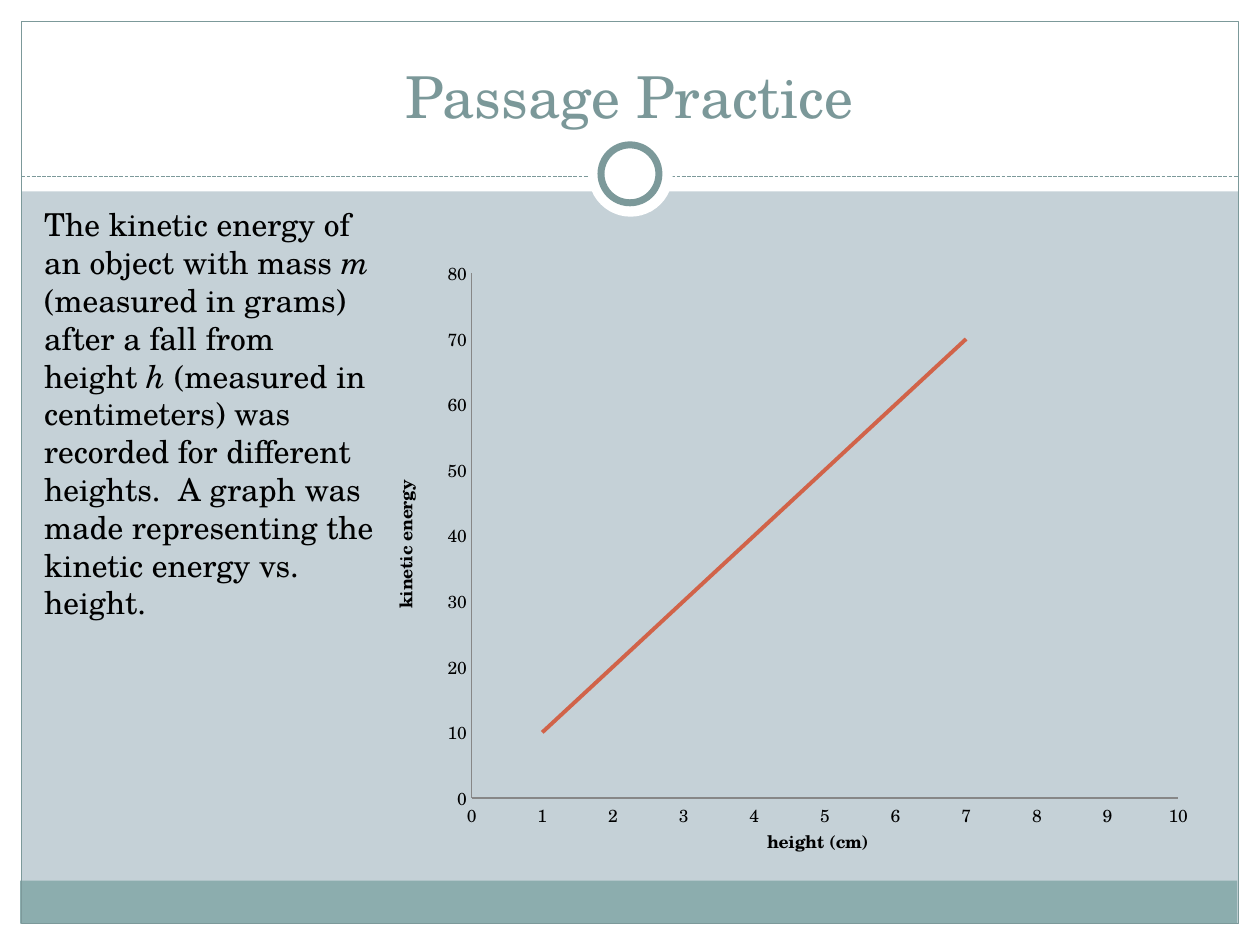
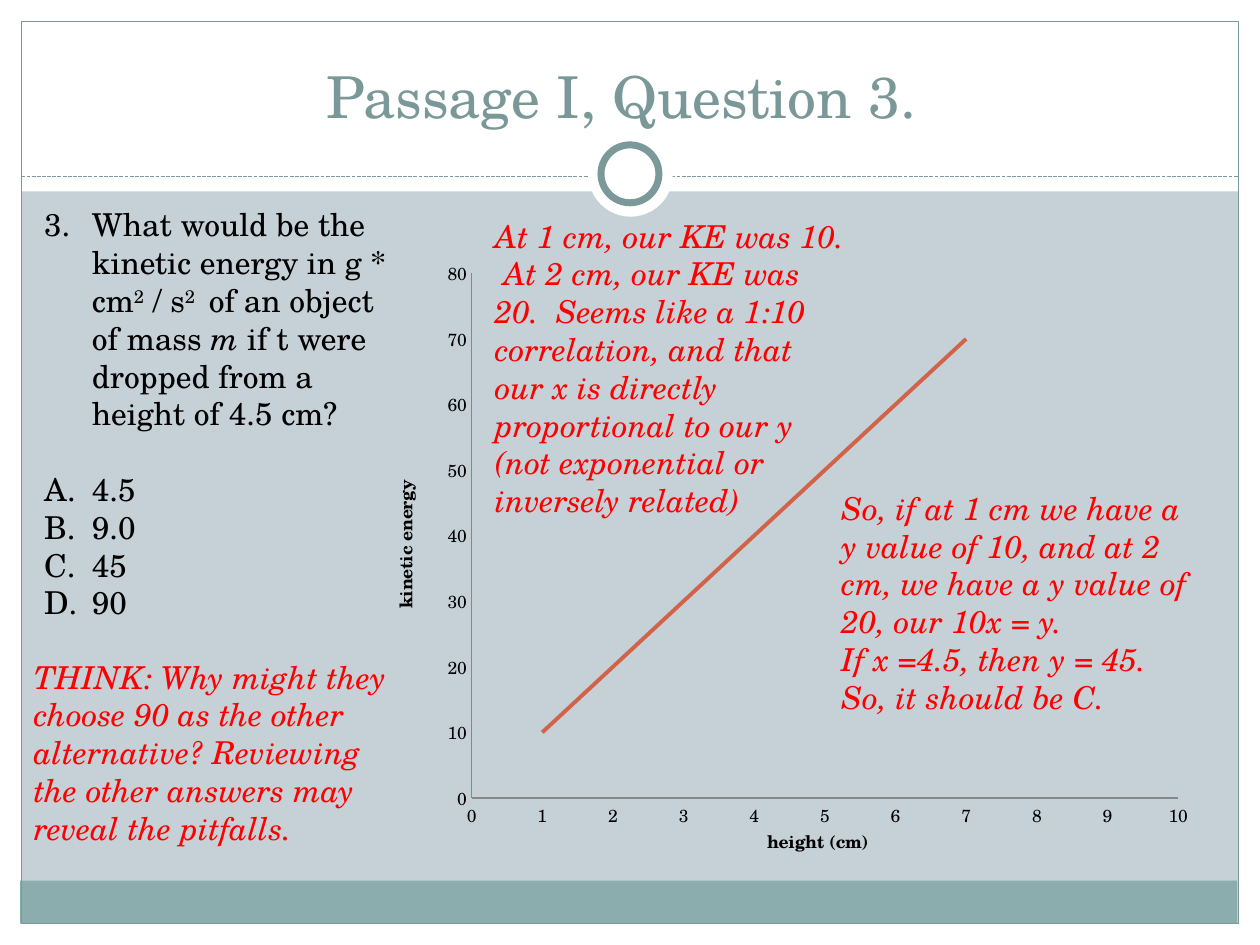
import collections
import pptx
import pptx.chart.data
import pptx.dml.color
import pptx.enum.chart
import pptx.enum.dml
import pptx.enum.shapes
import pptx.enum.text
import pptx.oxml
import pptx.oxml.ns
import pptx.util

Inches = pptx.util.Inches
Pt = pptx.util.Pt
RGB = pptx.dml.color.RGBColor.from_string
SHAPE = pptx.enum.shapes.MSO_SHAPE
qn = pptx.oxml.ns.qn

Theme = collections.namedtuple(
    "Theme", "font title_size body_size chart_size title text note page white band rule axis series")
theme = Theme(
    font="TeX Gyre Schola", title_size=Pt(33), body_size=Pt(18), chart_size=Pt(10),
    title=RGB("7B9899"), text=RGB("000000"), note=RGB("FF0000"), page=RGB("C5D1D7"),
    white=RGB("FFFFFF"), band=RGB("8CADAE"), rule=RGB("7C999A"), axis=RGB("878787"),
    series=RGB("D16349"))


def add_runs(p, runs, color, size):
    for text, style in runs:
        r = p.add_run()
        r.text = text
        r.font.name = theme.font
        r.font.size = size
        r.font.color.rgb = color
        r.font.italic = style == "italic"
        if style == "super":
            r.font.element.set("baseline", "30000") if hasattr(r.font, "element") else \
                r._r.get_or_add_rPr().set("baseline", "30000")


def set_bullet(p, kind, start):
    pPr = p._p.get_or_add_pPr()
    indent = Inches(0.38) if kind else 0
    pPr.set("marL", str(indent))
    pPr.set("indent", str(-indent))
    if not kind:
        pPr.append(pptx.oxml.parse_xml(f'<a:buNone {pptx.oxml.ns.nsdecls("a")}/>'))
        return
    for xml in (f'<a:buFont {pptx.oxml.ns.nsdecls("a")} typeface="{theme.font}"/>',
                f'<a:buAutoNum {pptx.oxml.ns.nsdecls("a")} type="{kind}" startAt="{start}"/>'):
        pPr.append(pptx.oxml.parse_xml(xml))


slides = [
    {"title": "Passage Practice",
     "body_size": (2.83, 3.43),
     "body": [
         (None, 1, 0, [
             ("The kinetic energy of an object with mass ", ""),
             ("m", "italic"),
             (" (measured in grams) after a fall from height ", ""),
             ("h ", "italic"),
             ("(measured in centimeters) was recorded for different heights.  "
              "A graph was made representing the kinetic energy vs. height.", "")])],
     "notes": []},
    {"title": "Passage I, Question 3. ",
     "body_size": (3, 3.74),
     "body": [
         ("arabicPeriod", 3, 0, [
             ("What would be the kinetic energy in g * cm", ""),
             ("2", "super"),
             (" / s", ""),
             ("2 ", "super"),
             (" of an object of mass ", ""),
             ("m ", "italic"),
             ("if t were dropped from a height of 4.5 cm?", "")]),
         ("alphaUcPeriod", 1, 21.6, [("4.5", "")]),
         ("alphaUcPeriod", 1, 0, [("9.0", "")]),
         ("alphaUcPeriod", 1, 0, [("45", "")]),
         ("alphaUcPeriod", 1, 0, [("90", "")])],
     "notes": [
         (3.83, 1.67, 2.22, [
             "At 1 cm, our KE was 10.  At 2 cm, our KE was 20.  Seems like a 1:10 correlation, "
             "and that our x is directly proportional to our y "
             "(not exponential or inversely related)"]),
         (6.58, 3.83, 1.92, [
             "So, if at 1 cm we have a y value of 10, and at 2 cm, "
             "we have a y value of 20, our 10x = y.",
             "If x =4.5, then y = 45.",
             "So, it should be C."]),
         (0.17, 5.17, 1.62, [
             "THINK: Why might they choose 90 as the other alternative? "
             "Reviewing the other answers may reveal the pitfalls."])]},
]

prs = pptx.Presentation()
prs.slide_width = Inches(10)
prs.slide_height = Inches(7.5)
layout = prs.slide_layouts[1]
layout.background.fill.solid()
layout.background.fill.fore_color.rgb = theme.page

title = layout.placeholders[0]
title.left, title.top, title.width, title.height = map(Inches, (0.33, 0.25, 9.33, 0.83))

s = prs.slides.add_slide(layout)
frame = []
for kind, box, fill, line in [
    (SHAPE.RECTANGLE, (0, 7.33, 10, 0.17), theme.white, None),
    (SHAPE.RECTANGLE, (0, 0, 10, 1.52), theme.white, None),
    (SHAPE.RECTANGLE, (0, 0, 0.17, 7.5), theme.white, None),
    (SHAPE.RECTANGLE, (9.83, 0, 0.17, 7.5), theme.white, None),
    (SHAPE.RECTANGLE, (0.16, 6.99, 9.66, 0.34), theme.band, None),
    (SHAPE.RECTANGLE, (0.17, 0.17, 9.66, 7.16), None, 0.75),
    (None, (0.17, 1.4, 9.83, 1.4), None, 0.75),
    (SHAPE.OVAL, (4.67, 1.05, 0.67, 0.67), theme.white, None),
    (SHAPE.OVAL, (4.77, 1.15, 0.46, 0.46), theme.white, 4),
]:
    if kind is None:
        sp = s.shapes.add_connector(pptx.enum.shapes.MSO_CONNECTOR.STRAIGHT, *map(Inches, box))
        sp.line.dash_style = pptx.enum.dml.MSO_LINE.SQUARE_DOT
    else:
        sp = s.shapes.add_shape(kind, *map(Inches, box))
        sp.shadow.inherit = False
        if fill is None:
            sp.fill.background()
        else:
            sp.fill.solid()
            sp.fill.fore_color.rgb = fill
    if line is None:
        sp.line.fill.background()
    else:
        sp.line.color.rgb = theme.rule
        sp.line.width = Pt(line)
    if kind is None:
        sp.element.spPr.append(
            pptx.oxml.parse_xml(f'<a:effectLst {pptx.oxml.ns.nsdecls("a")}/>'))
    frame.append(sp.element)

for i, el in enumerate(frame):
    el.xpath(".//p:cNvPr")[0].set("id", str(100 + i))
    layout.shapes.element.insert(2 + i, el)

for i, content in enumerate(slides):
    if i:
        s = prs.slides.add_slide(layout)

    tf = s.shapes.title.text_frame
    tf.auto_size = pptx.enum.text.MSO_AUTO_SIZE.NONE
    tf.vertical_anchor = pptx.enum.text.MSO_ANCHOR.BOTTOM
    p = tf.paragraphs[0]
    p.alignment = pptx.enum.text.PP_ALIGN.CENTER
    add_runs(p, [(content["title"], "")], theme.title, theme.title_size)

    data = pptx.chart.data.XyChartData()
    points = data.add_series("Series 1")
    for height in range(1, 8):
        points.add_data_point(height, 10 * height)
    chart = s.shapes.add_chart(
        pptx.enum.chart.XL_CHART_TYPE.XY_SCATTER_LINES_NO_MARKERS,
        *map(Inches, (0.33, 1.67, 9.3, 5.16)), data).chart
    chart.has_legend = False
    chart.has_title = False
    chart.font.name = theme.font
    chart.font.size = theme.chart_size
    chart.font.color.rgb = theme.text
    plot = chart.plots[0]
    plot.vary_by_categories = False
    series = plot.series[0]
    series.smooth = False
    series.format.line.color.rgb = theme.series
    series.format.line.width = Pt(2.25)

    for axis, name, top, step, rot in [
        (chart.category_axis, "height (cm)", 10, 1, 0),
        (chart.value_axis, "kinetic energy", 80, 10, -5400000),
    ]:
        axis.minimum_scale = 0
        axis.maximum_scale = top
        axis.major_unit = step
        axis.has_major_gridlines = False
        axis.major_tick_mark = pptx.enum.chart.XL_TICK_MARK.NONE
        axis.minor_tick_mark = pptx.enum.chart.XL_TICK_MARK.NONE
        axis.format.line.color.rgb = theme.axis
        axis.format.line.width = Pt(0.75)
        tf = axis.axis_title.text_frame
        add_runs(tf.paragraphs[0], [(name, "")], theme.text, theme.chart_size)
        tf.paragraphs[0].runs[0].font.bold = True
        bodyPr = axis.axis_title.element.find(".//" + qn("a:bodyPr"))
        bodyPr.set("rot", str(rot))
        bodyPr.set("vert", "horz")

    area = chart.element.find(".//" + qn("c:plotArea"))
    for old in area.findall(qn("c:layout")):
        area.remove(old)
    places = "".join(f'<c:{tag} val="{val}"/>' for tag, val in [
        ("layoutTarget", "inner"), ("xMode", "edge"), ("yMode", "edge"),
        ("x", 0.367), ("y", 0.097), ("w", 0.603), ("h", 0.807)])
    area.insert(0, pptx.oxml.parse_xml(
        f'<c:layout {pptx.oxml.ns.nsdecls("c")}><c:manualLayout>{places}'
        '</c:manualLayout></c:layout>'))
    chart.element.find(qn("c:chart")).addnext(pptx.oxml.parse_xml(
        f'<c:spPr {pptx.oxml.ns.nsdecls("c", "a")}><a:noFill/><a:ln><a:noFill/></a:ln></c:spPr>'))

    body = s.placeholders[1]
    body.left, body.top = Inches(0.25), Inches(1.58)
    body.width, body.height = map(Inches, content["body_size"])
    tf = body.text_frame
    tf.word_wrap = True
    tf.auto_size = pptx.enum.text.MSO_AUTO_SIZE.SHAPE_TO_FIT_TEXT
    for n, (kind, start, gap, runs) in enumerate(content["body"]):
        p = tf.add_paragraph() if n else tf.paragraphs[0]
        p.space_before = Pt(gap)
        set_bullet(p, kind, start)
        add_runs(p, runs, theme.text, theme.body_size)

    for left, top, height, lines in content["notes"]:
        tf = s.shapes.add_textbox(*map(Inches, (left, top, 3.01, height))).text_frame
        tf.word_wrap = True
        tf.auto_size = pptx.enum.text.MSO_AUTO_SIZE.SHAPE_TO_FIT_TEXT
        for n, text in enumerate(lines):
            p = tf.add_paragraph() if n else tf.paragraphs[0]
            add_runs(p, [(text, "italic")], theme.note, theme.body_size)

prs.save("out.pptx")
